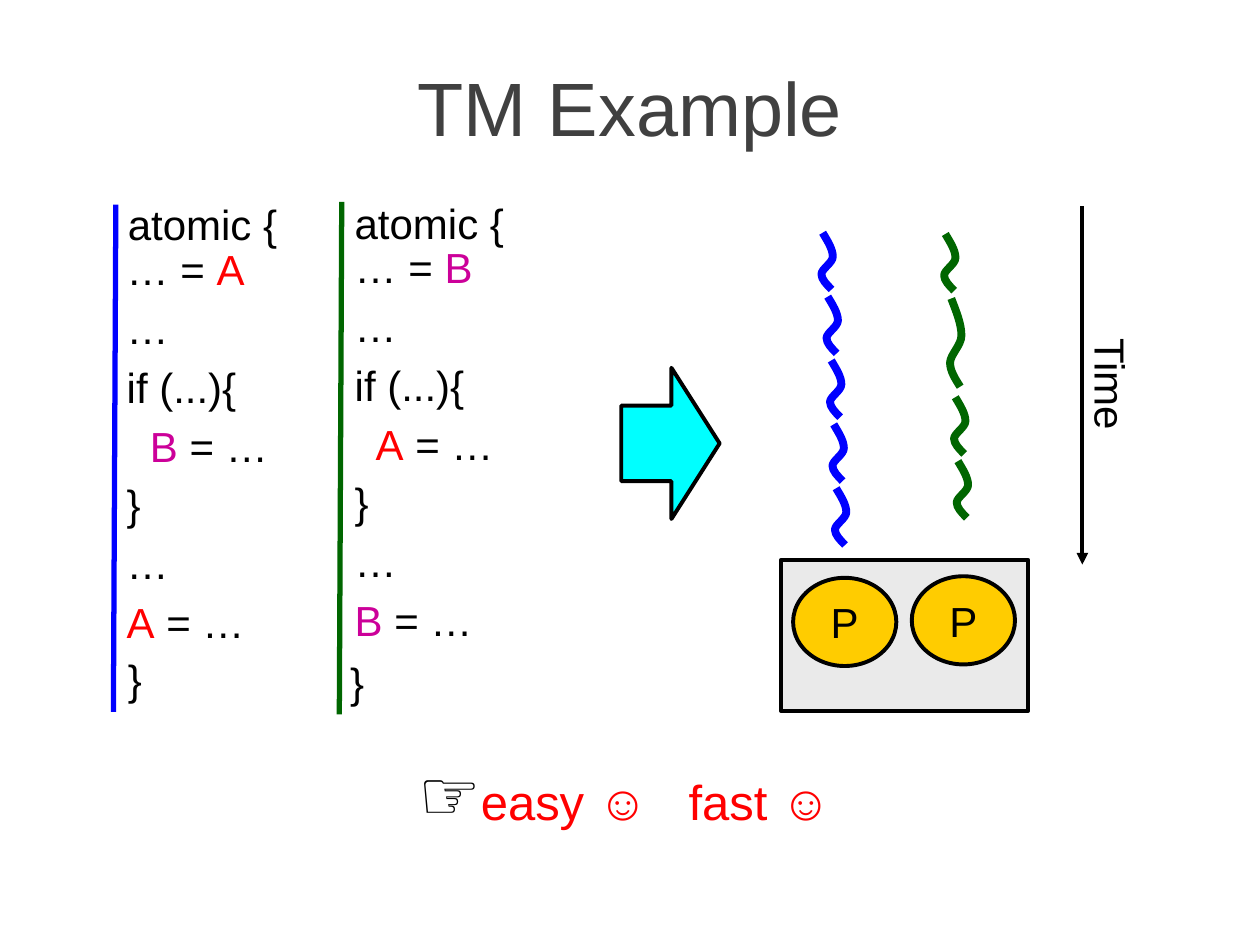
"""Build the TM Example slide: two atomic blocks run as threads on two processors."""
from dataclasses import dataclass

from lxml import etree
from pptx import Presentation
from pptx import util as u
from pptx.dml.color import RGBColor
from pptx.enum import shapes as sh, text as tx
from pptx.oxml.ns import qn


@dataclass(frozen=True)
class Theme:
    font: str = "Arial"
    sign: str = "Cabin"
    head: float = 43.2
    hand: float = 40
    note: float = 28
    body: float = 24
    space: float = 4.8
    edge: float = 2.25
    bar: float = 3
    wave: float = 4.5
    ink: str = "000000"
    title: str = "404040"
    red: str = "FF0000"
    pink: str = "CC0099"
    blue: str = "0000FF"
    green: str = "006600"
    cyan: str = "00FFFF"
    gold: str = "FFCC00"
    grey: str = "EAEAEA"


T = Theme()


@dataclass(frozen=True)
class Run:
    text: str
    color: str = T.ink
    size: float = T.body
    font: str = T.font


@dataclass(frozen=True)
class Box:
    left: float
    top: float
    width: float
    height: float

    def pts(self) -> tuple:
        return tuple(u.Pt(n) for n in (self.left, self.top, self.width, self.height))


@dataclass(frozen=True)
class Block:
    color: str
    start: tuple
    end: tuple
    open: Box
    code: Box
    close: Box
    first: Run
    second: Run


@dataclass(frozen=True)
class Wave:
    left: float
    top: float
    high: float = 32.4


@dataclass(frozen=True)
class Thread:
    color: str
    waves: tuple


BLOCKS = (
    Block(T.blue, (66.2, 116.9), (64.8, 406.8), Box(66, 109.8, 108, 36),
          Box(65.3, 135.7, 95, 243.4), Box(66, 370.1, 23.8, 36),
          Run("A", T.red), Run("B", T.pink)),
    Block(T.green, (195.3, 115.4), (193.9, 408.2), Box(195.6, 109.4, 108, 36),
          Box(195.6, 134.6, 95, 277.2), Box(193, 371.5, 23.8, 36),
          Run("B", T.pink), Run("A", T.red)),
)
STEP = 36.5
LEFTS = (469.4, 472.3, 474.3, 475.7, 477.1)
THREADS = (
    Thread(T.blue, tuple(Wave(x, 133 + i * STEP) for i, x in enumerate(LEFTS))),
    Thread(T.green, (Wave(539.5, 133.7), Wave(542.9, 170.6, 50.4),
                     Wave(545.2, 227), Wave(546.7, 227 + STEP))),
)
CURVE = ((0.7, 0), (3.6, 0.15), (6.5, 0.29), (6.5, 0.42), (6.5, 0.53), (0, 0.64),
         (0, 0.73), (0, 0.82), (2.9, 0.91), (5.8, 1))


def rgb(color: str) -> RGBColor:
    return RGBColor.from_string(color)


def write(frame, rows: list, align=tx.PP_ALIGN.LEFT, wrap: bool = True,
          anchor=tx.MSO_ANCHOR.TOP, tab: float = 0) -> None:
    frame.word_wrap = wrap
    frame.vertical_anchor = anchor
    for i, row in enumerate(rows):
        para = frame.add_paragraph() if i else frame.paragraphs[0]
        para.alignment = align
        if i:
            para.space_before = u.Pt(T.space)
        if tab:
            stops = etree.SubElement(para._p.get_or_add_pPr(), qn("a:tabLst"))
            etree.SubElement(stops, qn("a:tab"), pos=str(u.Pt(tab)), algn="l")
        for item in row:
            run = para.add_run()
            run.text = item.text
            run.font.name = item.font
            run.font.size = u.Pt(item.size)
            run.font.color.rgb = rgb(item.color)


def label(slide, box: Box, rows: list, turn: float = 0, **style) -> None:
    shape = slide.shapes.add_textbox(*box.pts())
    shape.rotation = turn
    write(shape.text_frame, rows, **style)


def stroke(slide, start: tuple, end: tuple, color: str, width: float,
           arrow: bool = False) -> None:
    ends = [u.Pt(n) for n in start + end]
    line = slide.shapes.add_connector(sh.MSO_CONNECTOR.STRAIGHT, *ends)
    line.line.color.rgb = rgb(color)
    line.line.width = u.Pt(width)
    if arrow:
        etree.SubElement(line.line._get_or_add_ln(), qn("a:tailEnd"), type="triangle")
    etree.SubElement(line._element.spPr, qn("a:effectLst"))


def solid(slide, kind, box: Box, color: str):
    shape = slide.shapes.add_shape(kind, *box.pts())
    shape.shadow.inherit = False
    shape.fill.solid()
    shape.fill.fore_color.rgb = rgb(color)
    shape.line.color.rgb = rgb(T.ink)
    shape.line.width = u.Pt(T.edge)
    return shape


def smooth(shape) -> None:
    sides = list(shape._element.iter(qn("a:lnTo")))
    for i in range(0, len(sides), 3):
        curve = etree.Element(qn("a:cubicBezTo"))
        sides[i].addprevious(curve)
        for side in sides[i:i + 3]:
            curve.append(side[0])
            side.getparent().remove(side)


def ripple(slide, wave: Wave, color: str) -> None:
    spots = [(u.Pt(wave.left + x), u.Pt(wave.top + y * wave.high)) for x, y in CURVE]
    pen = slide.shapes.build_freeform(*spots[0])
    pen.add_line_segments(spots[1:], close=False)
    shape = pen.convert_to_shape()
    smooth(shape)
    shape.shadow.inherit = False
    shape.fill.background()
    shape.line.color.rgb = rgb(color)
    shape.line.width = u.Pt(T.wave)


def draw_block(slide, block: Block) -> None:
    one, two, rest = block.first, block.second, Run(" = …")
    dots, shut = [Run("…")], [Run("}")]
    label(slide, block.code, [
        [Run("… = "), one], dots, [Run("if (...){")],
        [Run("  " + two.text, two.color), rest], shut, dots, [one, rest]])
    label(slide, block.open, [[Run("atomic {")]])
    label(slide, block.close, [shut])
    stroke(slide, block.start, block.end, block.color, T.bar)


def main() -> None:
    deck = Presentation()
    deck.slide_width, deck.slide_height = u.Pt(720), u.Pt(540)
    slide = deck.slides.add_slide(deck.slide_layouts[6])
    mid = dict(align=tx.PP_ALIGN.CENTER, anchor=tx.MSO_ANCHOR.MIDDLE)
    label(slide, Box(0, 42.8, 720, 36), [[Run("TM Example", T.title, T.head)]], **mid)
    for block in BLOCKS:
        draw_block(slide, block)
    for thread in THREADS:
        for wave in thread.waves:
            ripple(slide, wave, thread.color)
    solid(slide, sh.MSO_SHAPE.RECTANGLE, Box(446.4, 319.9, 141.1, 86.4), T.grey)
    for left, top in ((453.2, 330.2), (521, 329.3)):
        chip = solid(slide, sh.MSO_SHAPE.OVAL, Box(left, top, 59, 50.4), T.gold)
        write(chip.text_frame, [[Run("P")]], wrap=False, **mid)
    stroke(slide, (618.5, 118), (618.5, 322.6), T.ink, T.edge, arrow=True)
    label(slide, Box(601.2, 201.4, 67.7, 36), [[Run("Time")]], turn=90,
          align=tx.PP_ALIGN.CENTER, wrap=False)
    arrow = solid(slide, sh.MSO_SHAPE.RIGHT_ARROW, Box(355, 210.2, 56.2, 86.4), T.cyan)
    arrow.adjustments[0], arrow.adjustments[1] = 0.5, 0.49
    label(slide, Box(231.8, 425.2, 250.6, 55.4), [[
        Run("☞", size=T.hand, font=T.sign), Run("easy ☺\tfast ☺", T.red, T.note)]],
        anchor=tx.MSO_ANCHOR.MIDDLE, tab=154.6)
    deck.save("out.pptx")


if __name__ == "__main__":
    main()
